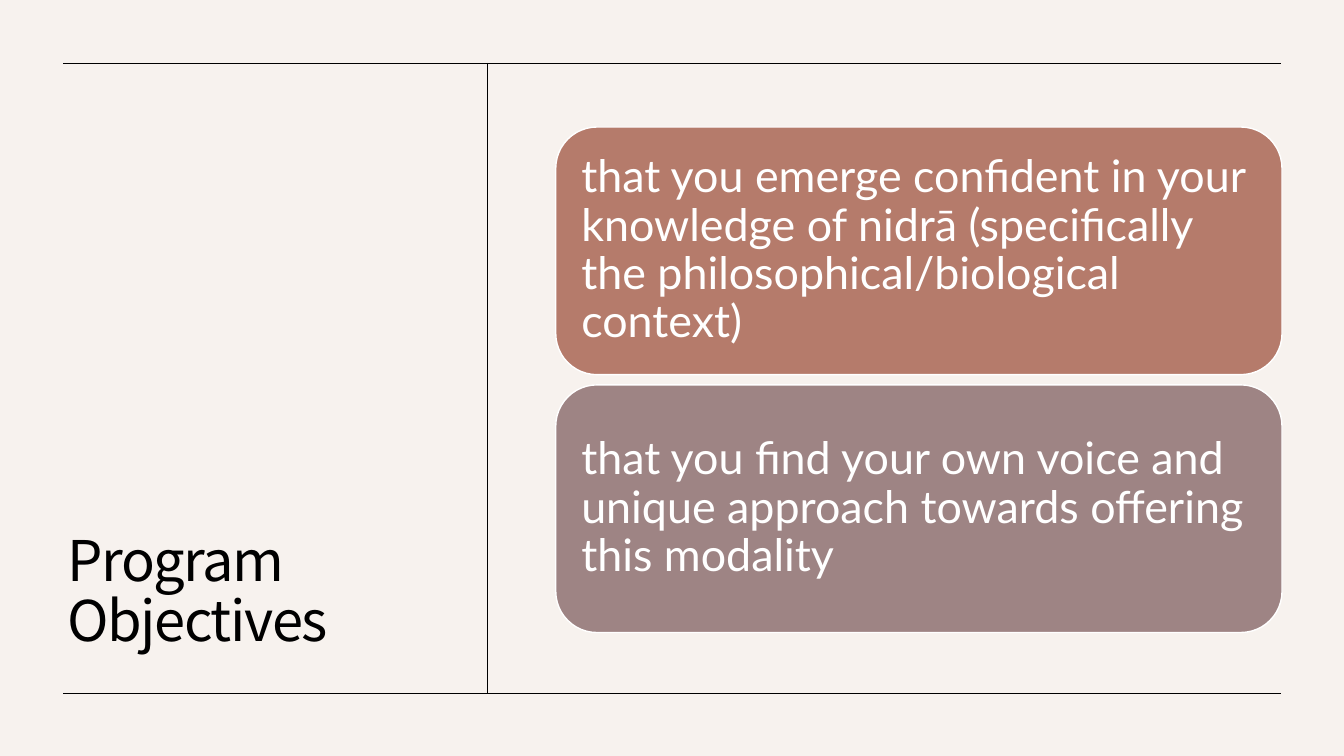
from dataclasses import dataclass

from lxml import etree
from pptx import Presentation
from pptx.dml.color import RGBColor
from pptx.enum.shapes import MSO_CONNECTOR as CONN, MSO_SHAPE as SHAPE
from pptx.enum.text import MSO_ANCHOR as ANCHOR, PP_ALIGN as ALIGN
from pptx.oxml.ns import qn
from pptx.util import Pt


@dataclass(frozen=True)
class Theme:
    paper: RGBColor = RGBColor.from_string("F7F2EE")
    ink: RGBColor = RGBColor.from_string("000000")
    white: RGBColor = RGBColor.from_string("FFFFFF")
    clay: RGBColor = RGBColor.from_string("B57B6B")
    mauve: RGBColor = RGBColor.from_string("9E8484")
    title_font: str = "Noto Sans CJK KR"
    body_font: str = "Lato"
    title_size: int = 40
    body_size: int = 32


T = Theme()


def style_text(p, font, size, color):
    p.alignment = ALIGN.LEFT
    for r in p.runs:
        r.font.name = font
        r.font.size = Pt(size)
        r.font.color.rgb = color


prs = Presentation()
prs.slide_width, prs.slide_height = Pt(960), Pt(540)
s = prs.slides.add_slide(prs.slide_layouts[5])
s.background.fill.solid()
s.background.fill.fore_color.rgb = T.paper

# Title
title = s.shapes.title
title.left, title.top, title.width, title.height = Pt(41), Pt(71.3), Pt(275.8), Pt(398.9)
tf = title.text_frame
tf.text = "Program Objectives"
tf.word_wrap = True
tf.vertical_anchor = ANCHOR.BOTTOM
p = tf.paragraphs[0]
p.line_spacing = Pt(43)
style_text(p, T.title_font, T.title_size, T.ink)
p.runs[0].font._element.set("spc", "-100")

# Frame rules
left, right, top, bottom, divider = 45, 915, 45, 495, 348
for x1, y1, x2, y2 in [
    (right, bottom, left, bottom),
    (divider, top, divider, bottom),
    (right, top, left, top),
]:
    rule = s.shapes.add_connector(CONN.STRAIGHT, Pt(x1), Pt(y1), Pt(x2), Pt(y2))
    rule.line.color.rgb = T.ink
    rule.line.width = Pt(0.5)
    etree.SubElement(rule._element.spPr, qn("a:effectLst"))

# Objective cards
objectives = [
    ("that you emerge confident in your knowledge of nidrā "
     "(specifically the philosophical/biological context)", T.clay),
    ("that you find your own voice and unique approach "
     "towards offering this modality", T.mauve),
]
card_top, card_height, card_pitch = 90.7, 176.9, 184.2
for i, (text, color) in enumerate(objectives):
    card = s.shapes.add_shape(SHAPE.ROUNDED_RECTANGLE, Pt(397), Pt(card_top + i * card_pitch),
                              Pt(518.8), Pt(card_height))
    card.shadow.inherit = False
    card.fill.solid()
    card.fill.fore_color.rgb = color
    card.line.color.rgb = T.white
    card.line.width = Pt(1)
    tf = card.text_frame
    tf.text = text
    tf.word_wrap = True
    tf.vertical_anchor = ANCHOR.MIDDLE
    tf.margin_left = tf.margin_right = tf.margin_top = tf.margin_bottom = Pt(9.6)
    p = tf.paragraphs[0]
    p.line_spacing = 0.9
    style_text(p, T.body_font, T.body_size, T.white)

prs.save("out.pptx")
